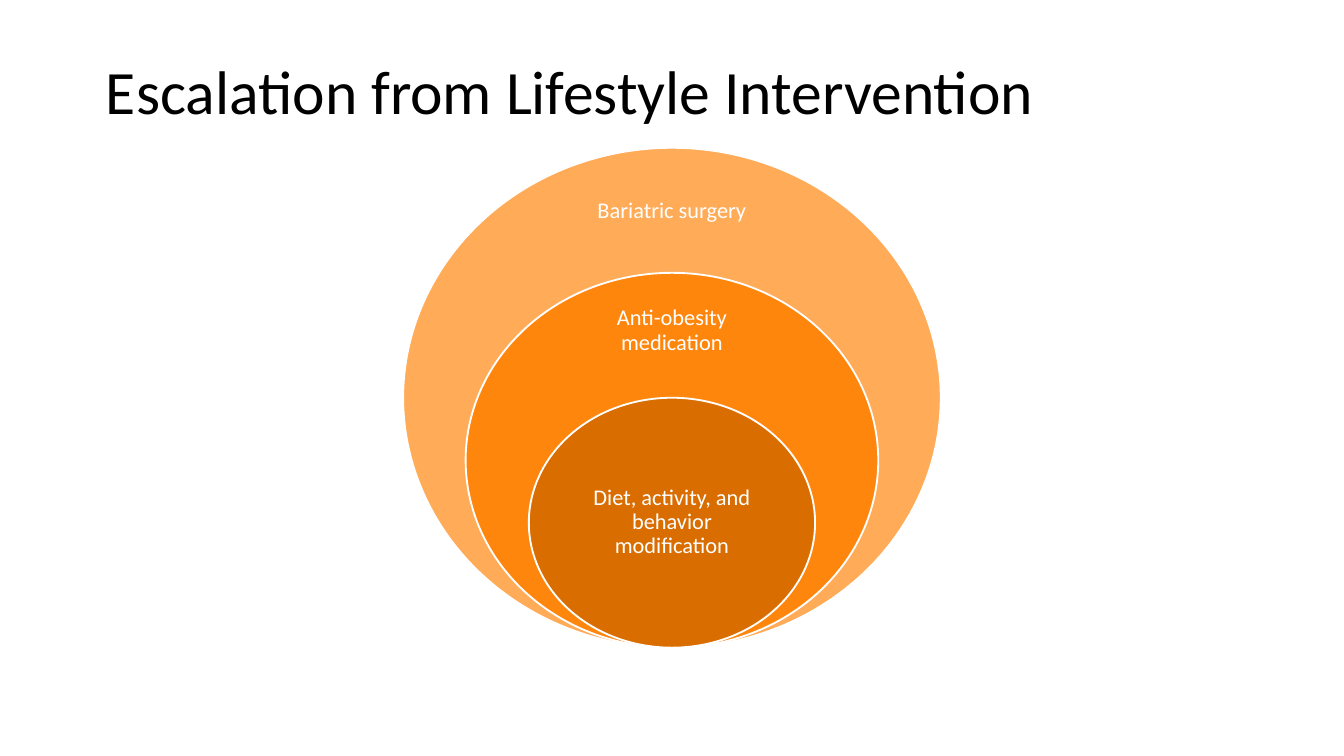
from dataclasses import dataclass

from pptx import Presentation
from pptx import util as u
from pptx.dml.color import RGBColor
from pptx.enum import shapes, text


@dataclass(frozen=True)
class Theme:
    font: str = "Calibri"
    title_size: int = 33
    label_size: int = 12
    title: str = "000000"
    light: str = "FFFFFF"
    outer: str = "FFAB57"
    middle: str = "FF860D"
    inner: str = "DA6D00"


THEME = Theme()
SLIDE_WIDTH = 10
SLIDE_HEIGHT = SLIDE_WIDTH * 9 / 16
CENTER_X = SLIDE_WIDTH / 2
RINGS_BOTTOM = 4.82


def add_text(s, content, left, top, width, height, *, size, color,
             align=text.PP_ALIGN.LEFT, inset_x=0.1, inset_y=0.05):
    tf = s.shapes.add_textbox(*map(u.Inches, (left, top, width, height))).text_frame
    tf.word_wrap = True
    tf.vertical_anchor = text.MSO_ANCHOR.MIDDLE
    tf.margin_left = tf.margin_right = u.Inches(inset_x)
    tf.margin_top = tf.margin_bottom = u.Inches(inset_y)
    p = tf.paragraphs[0]
    p.alignment = align
    p.line_spacing = 0.9
    r = p.add_run()
    r.text = content
    r.font.name = THEME.font
    r.font.size = u.Pt(size)
    r.font.color.rgb = RGBColor.from_string(color)


def add_ring(s, width, height, fill):
    """Draw an ellipse on the shared centre line, resting on the shared base."""
    sp = s.shapes.add_shape(
        shapes.MSO_SHAPE.OVAL,
        *map(u.Inches, (CENTER_X - width / 2, RINGS_BOTTOM - height, width, height)))
    sp.shadow.inherit = False
    sp.fill.solid()
    sp.fill.fore_color.rgb = RGBColor.from_string(fill)
    sp.line.color.rgb = RGBColor.from_string(THEME.light)
    sp.line.width = u.Pt(1)


def add_label(s, content, top, width, height):
    add_text(s, content, CENTER_X - width / 2, top, width, height,
             size=THEME.label_size, color=THEME.light,
             align=text.PP_ALIGN.CENTER, inset_x=0.09, inset_y=0.09)


def main():
    prs = Presentation()
    prs.slide_width, prs.slide_height = u.Inches(SLIDE_WIDTH), u.Inches(SLIDE_HEIGHT)
    s = prs.slides.add_slide(prs.slide_layouts[6])

    # Title
    add_text(s, "Escalation from Lifestyle Intervention", 0.69, 0.3, 8.62, 0.8,
             size=THEME.title_size, color=THEME.title)

    # Nested rings, outermost first: ring size, fill, label, label top and size
    rings = [
        (4, 3.72, THEME.outer, "Bariatric surgery", 1.29, 1.4, 0.56),
        (3.07, 2.79, THEME.middle, "Anti-obesity medication", 2.2, 1.43, 0.52),
        (2.13, 1.86, THEME.inner, "Diet, activity, and behavior modification",
         3.42, 1.51, 0.93),
    ]
    for width, height, fill, label, *label_box in rings:
        add_ring(s, width, height, fill)
        add_label(s, label, *label_box)

    prs.save("out.pptx")


if __name__ == "__main__":
    main()
